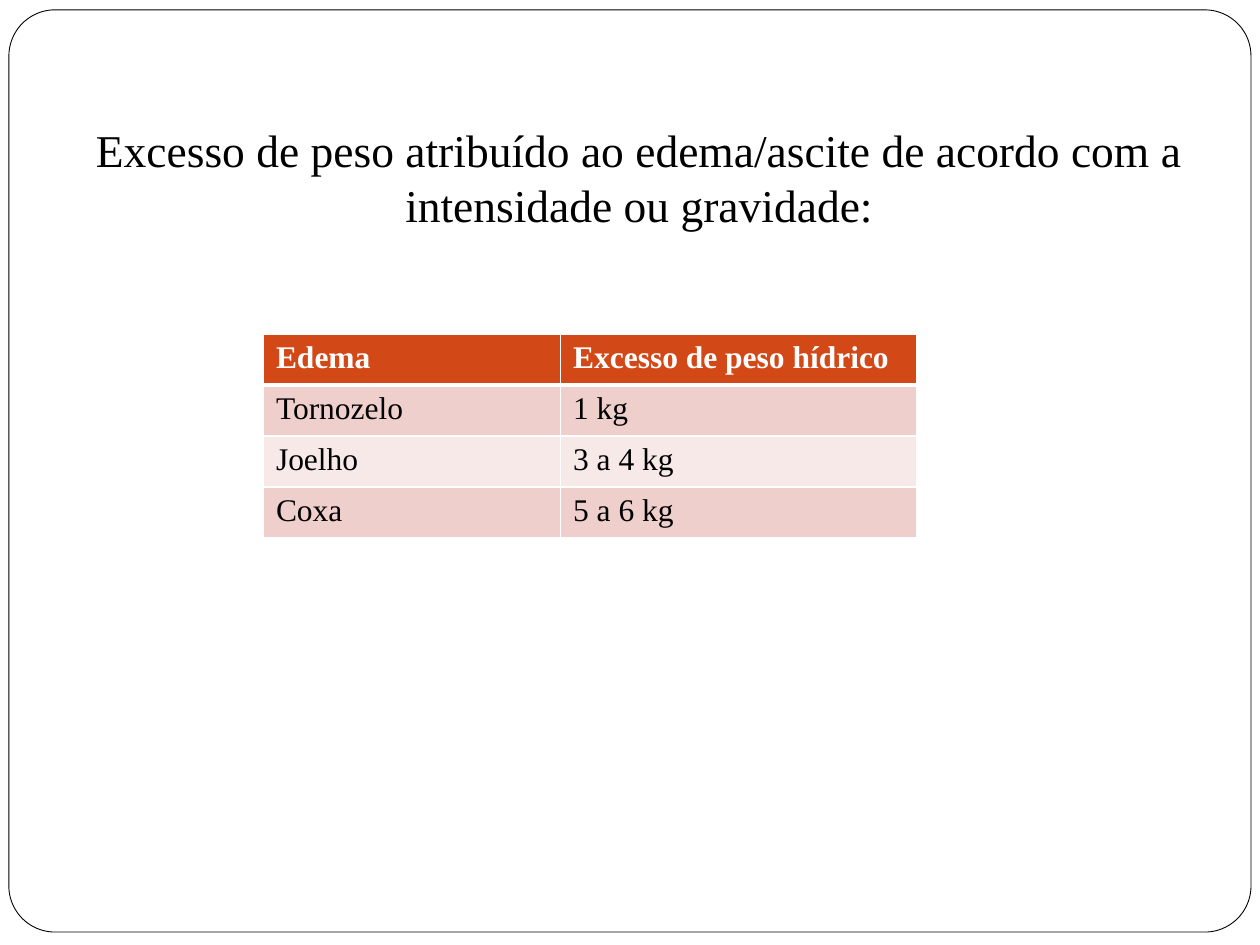
import pptx
import pptx.dml.color
import pptx.enum.shapes
import pptx.enum.text
import pptx.oxml
import pptx.oxml.ns
import pptx.util
from pptx.util import Cm

COLOURS = {
    "white": "FFFFFF",
    "black": "000000",
    "header": "D34817",
    "odd row": "EFCFCC",
    "even row": "F7E9E8",
}
FONT = "Times New Roman"


def colour(name):
    return pptx.dml.color.RGBColor.from_string(COLOURS[name])


def write_text(frame, text, size=18, ink="black", bold=False, align="LEFT"):
    """Put one formatted paragraph in a text frame."""
    para = frame.paragraphs[0]
    para.alignment = getattr(pptx.enum.text.PP_ALIGN, align)
    span = para.add_run()
    span.text = text
    span.font.name = FONT
    span.font.size = pptx.util.Pt(size)
    span.font.bold = bold
    span.font.color.rgb = colour(ink)


def add_border(cell, side, width, ink="white"):
    """Add a border; call before the cell is filled, as XML order matters."""
    line = pptx.oxml.parse_xml(
        f'<a:{side} {pptx.oxml.ns.nsdecls("a")} w="{pptx.util.Pt(width)}">'
        f'<a:solidFill><a:srgbClr val="{COLOURS[ink]}"/></a:solidFill></a:{side}>'
    )
    cell._tc.get_or_add_tcPr().append(line)


class SlideBuilder:
    def __init__(self, deck):
        self.page = deck.slides.add_slide(deck.slide_layouts[6])

    def frame(self, left, top, width, height, corner):
        shape = self.page.shapes.add_shape(
            pptx.enum.shapes.MSO_SHAPE.ROUNDED_RECTANGLE,
            Cm(left), Cm(top), Cm(width), Cm(height))
        shape.adjustments[0] = corner
        shape.shadow.inherit = False
        shape.fill.solid()
        shape.fill.fore_color.rgb = colour("white")
        shape.line.color.rgb = colour("black")
        shape.line.width = pptx.util.Pt(0.5)

    def text(self, left, top, width, height, text, **style):
        box = self.page.shapes.add_textbox(Cm(left), Cm(top), Cm(width), Cm(height))
        box.text_frame.word_wrap = True
        write_text(box.text_frame, text, **style)

    def table(self, left, top, widths, row_height, rows):
        table = self.page.shapes.add_table(
            len(rows), len(widths), Cm(left), Cm(top),
            Cm(sum(widths)), Cm(row_height * len(rows))).table
        for column, width in zip(table.columns, widths):
            column.width = Cm(width)
        for r, values in enumerate(rows):
            table.rows[r].height = Cm(row_height)
            header = r == 0
            fill = "header" if header else ("odd row" if r % 2 else "even row")
            for c, value in enumerate(values):
                cell = table.cell(r, c)
                # The rule under the header is thicker than the others
                for side in ("lnL", "lnR", "lnT", "lnB"):
                    thick = (header and side == "lnB") or (r == 1 and side == "lnT")
                    add_border(cell, side, 3 if thick else 1)
                cell.fill.solid()
                cell.fill.fore_color.rgb = colour(fill)
                write_text(cell.text_frame, value, bold=header,
                           ink="white" if header else "black")


def main():
    deck = pptx.Presentation()
    deck.slide_width, deck.slide_height = Cm(25.4), Cm(19.05)
    slide = SlideBuilder(deck)

    # Page outline
    slide.frame(0.18, 0.2, 25.04, 18.59, corner=0.05)

    # Heading
    slide.text(
        0.89, 2.34, 24, 2.4,
        "Excesso de peso atribuído ao edema/ascite de acordo com a "
        "intensidade ou gravidade:",
        size=26, align="CENTER")

    # Excess weight by extent of edema
    slide.table(5.31, 6.73, (5.99, 7.19), 1.03, [
        ("Edema", "Excesso de peso hídrico"),
        ("Tornozelo", "1 kg"),
        ("Joelho", "3 a 4 kg"),
        ("Coxa", "5 a 6 kg"),
    ])

    deck.save("out.pptx")


if __name__ == "__main__":
    main()
